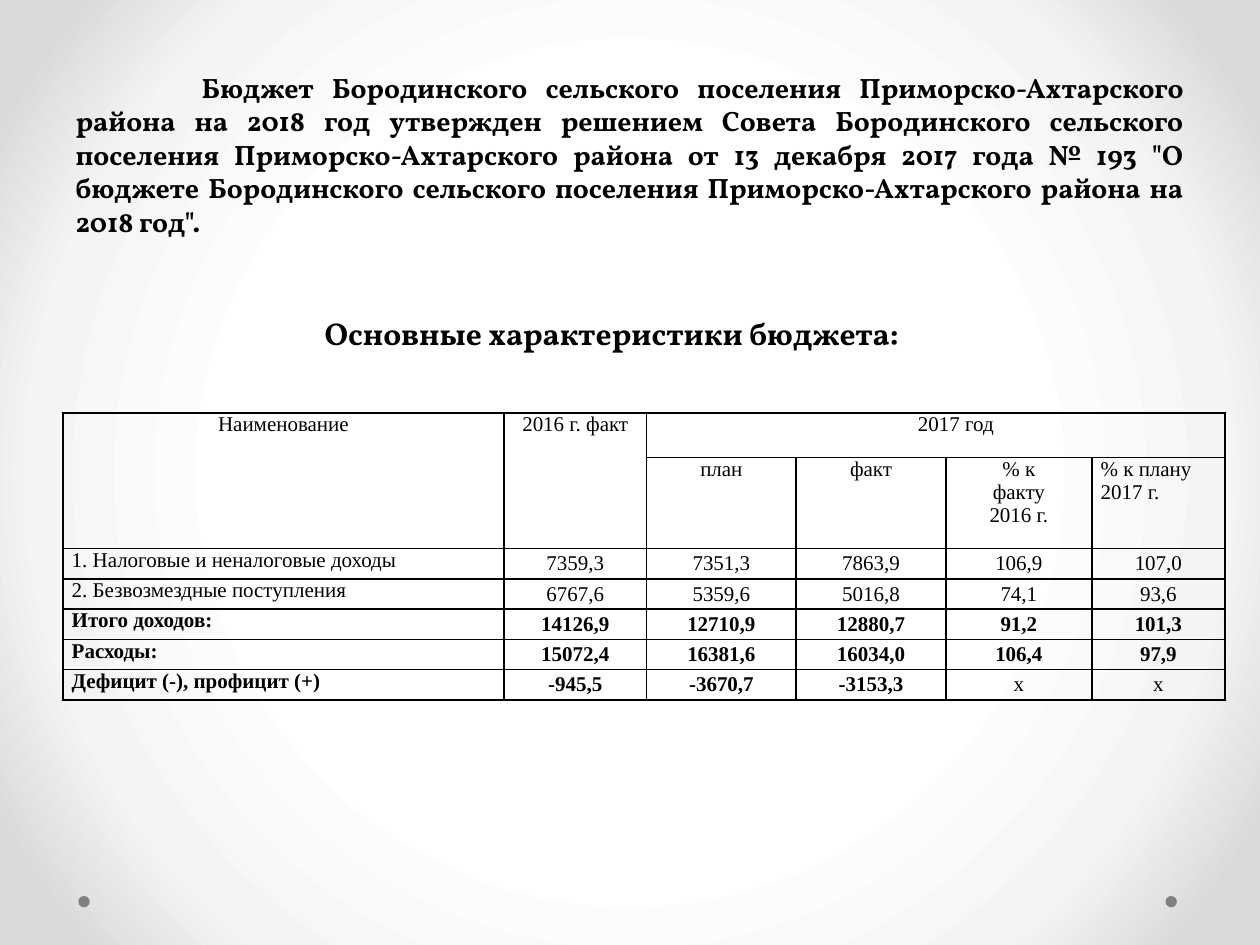
"""Build the budget characteristics slide."""
from lxml.etree import SubElement as Sub
from pptx import Presentation
from pptx.dml.color import RGBColor
from pptx.enum.shapes import MSO_SHAPE as Shape
from pptx.enum.text import MSO_ANCHOR as Anchor, MSO_AUTO_SIZE as Fit, PP_ALIGN as Align
from pptx.oxml.ns import qn
from pptx.util import Pt

BLACK = RGBColor(0, 0, 0)
GREY = RGBColor(0x80, 0x80, 0x80)
WHITE = RGBColor(0xFF, 0xFF, 0xFF)
PALE = RGBColor(0xF4, 0xF4, 0xF4)
SILVER = RGBColor(0xDA, 0xDA, 0xDA)

INTRO = ('Бюджет Бородинского сельского поселения Приморско-Ахтарского района '
         'на 2018 год утвержден решением Совета Бородинского сельского поселения '
         'Приморско-Ахтарского района от 13 декабря 2017 года № 193 "О бюджете '
         'Бородинского сельского поселения Приморско-Ахтарского района на 2018 год".')
COLS = [252, 81.5, 85.5, 85.5, 83.5, 76]
ROWS = [25.5, 52] + [17.3] * 5
HEADER = [
    ["Наименование", "2016 г. факт", "2017 год", "", "", ""],
    ["", "", "план", "факт", "% к\nфакту\n2016 г.", "% к плану\n2017 г."],
]
BODY = [
    ["1. Налоговые и неналоговые доходы", "7359,3", "7351,3", "7863,9", "106,9", "107,0"],
    ["2. Безвозмездные поступления", "6767,6", "5359,6", "5016,8", "74,1", "93,6"],
    ["Итого доходов:", "14126,9", "12710,9", "12880,7", "91,2", "101,3"],
    ["Расходы:", "15072,4", "16381,6", "16034,0", "106,4", "97,9"],
    ["Дефицит (-), профицит (+)", "-945,5", "-3670,7", "-3153,3", "х", "х"],
]
MERGES = [(0, 0, 1, 0), (0, 1, 1, 1), (0, 2, 0, 5)]


class Deck:
    """Hold the style and the current slide."""

    head = {"name": "Vollkorn", "bold": True}
    cell = {"name": "Times New Roman", "size": Pt(12)}
    inset = {"margin_left": Pt(5), "margin_right": Pt(5), "margin_top": 0, "margin_bottom": 0}

    def __init__(self, prs):
        self.s = prs.slides.add_slide(prs.slide_layouts[5])

    def apply(self, obj, fmt):
        for key, value in fmt.items():
            setattr(obj, key, value)

    def put_text(self, tf, text, font, align):
        tf.text = text
        for p in tf.paragraphs:
            p.alignment = align
            for r in p.runs:
                self.apply(r.font, font)
                r.font.color.rgb = BLACK

    def background(self, stops):
        self.s.background.fill.gradient()
        grad = self.s.element.find(".//" + qn("a:gradFill"))
        for child in list(grad):
            grad.remove(child)
        gs_list = Sub(grad, qn("a:gsLst"))
        for pos, color in stops:
            gs = Sub(gs_list, qn("a:gs"), pos=str(pos * 1000))
            Sub(gs, qn("a:srgbClr"), val=str(color))
        circle = Sub(grad, qn("a:path"), {"path": "circle"})
        Sub(circle, qn("a:fillToRect"), {side: "50000" for side in "ltrb"})

    def dot(self, x, y, d):
        sp = self.s.shapes.add_shape(Shape.OVAL, Pt(x), Pt(y), Pt(d), Pt(d))
        sp.shadow.inherit = False
        sp.fill.solid()
        sp.fill.fore_color.rgb = GREY
        sp.line.fill.background()

    def title(self, text, x, y, w, h):
        sp = self.s.shapes.title
        self.apply(sp, {"left": Pt(x), "top": Pt(y), "width": Pt(w), "height": Pt(h)})
        tf = sp.text_frame
        self.apply(tf, {"vertical_anchor": Anchor.BOTTOM, "auto_size": Fit.NONE})
        self.put_text(tf, text, {**self.head, "size": Pt(16)}, Align.JUSTIFY)
        tf.paragraphs[0]._p.get_or_add_pPr().set("indent", str(Pt(72)))

    def caption(self, text, x, y, w, h):
        tf = self.s.shapes.add_textbox(Pt(x), Pt(y), Pt(w), Pt(h)).text_frame
        self.apply(tf, {"word_wrap": False, "auto_size": Fit.SHAPE_TO_FIT_TEXT})
        self.put_text(tf, text, {**self.head, "size": Pt(18)}, Align.LEFT)

    def borders(self, cell):
        tc_pr = cell._tc.get_or_add_tcPr()
        for i, side in enumerate(("lnL", "lnR", "lnT", "lnB")):
            ln = tc_pr.makeelement(qn("a:" + side), {"w": str(Pt(1))})
            Sub(Sub(ln, qn("a:solidFill")), qn("a:srgbClr"), val=str(BLACK))
            tc_pr.insert(i, ln)

    def table(self, x, y):
        rows = HEADER + BODY
        frame = self.s.shapes.add_table(len(ROWS), len(COLS), Pt(x), Pt(y),
                                        Pt(sum(COLS)), Pt(sum(ROWS)))
        tbl = frame.table
        self.apply(tbl, {"first_row": False, "horz_banding": False})
        for col, w in zip(tbl.columns, COLS):
            col.width = Pt(w)
        for row, h in zip(tbl.rows, ROWS):
            row.height = Pt(h)
        for i, row in enumerate(rows):
            for j, text in enumerate(row):
                cell = tbl.cell(i, j)
                is_body = i >= len(HEADER)
                left = (is_body and j == 0) or (i, j) == (1, 5)
                middle = is_body and j > 0
                self.apply(cell, self.inset)
                cell.vertical_anchor = Anchor.MIDDLE if middle else Anchor.TOP
                cell.fill.background()
                self.borders(cell)
                font = {**self.cell, "bold": i >= 4 and text != "х"}
                self.put_text(cell.text_frame, text, font, Align.LEFT if left else Align.CENTER)
        for top, first, bottom, last in MERGES:
            tbl.cell(top, first).merge(tbl.cell(bottom, last))
        p = tbl.cell(0, 2).text_frame.paragraphs[0]
        p._p.get_or_add_pPr().set("marL", str(Pt(23)))


def main():
    prs = Presentation()
    prs.slide_width, prs.slide_height = Pt(720), Pt(540)
    deck = Deck(prs)
    deck.background([(50, WHITE), (76, PALE), (92, SILVER)])
    for x in (666, 44.8):
        deck.dot(x, 512, 6.5)
    deck.title(INTRO, 36, 0, 648, 139.7)
    deck.caption("Основные характеристики бюджета:", 178.5, 175.7, 352, 29)
    deck.table(36, 236)
    prs.save("out.pptx")


if __name__ == "__main__":
    main()
